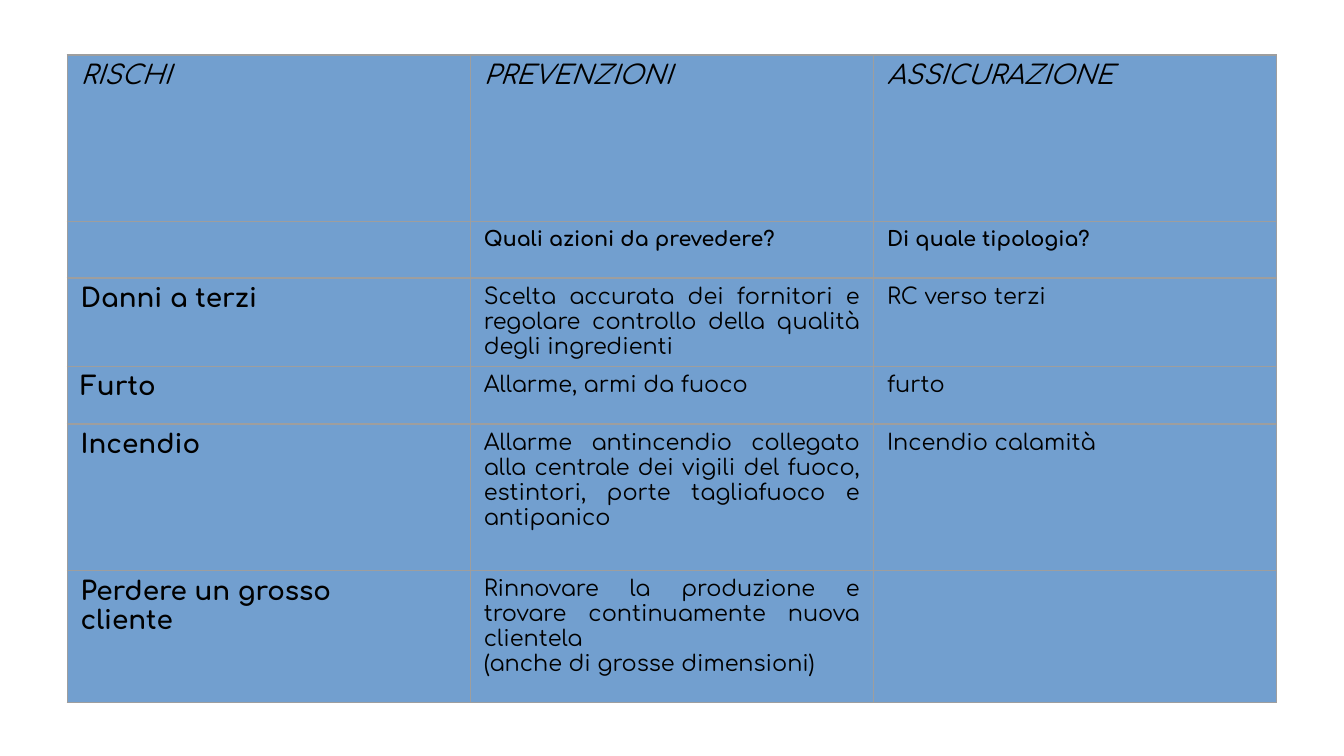
"""Build a slide with a table of business risks, preventions and insurance."""
import pptx
import pptx.dml.color
import pptx.enum.text
import pptx.oxml
import pptx.oxml.ns
import pptx.util

ROWS = [
    (1.24, "heading", ("RISCHI", "PREVENZIONI", "ASSICURAZIONE")),
    (0.42, "question", ("", "Quali azioni da prevedere?", "Di quale tipologia?")),
    (0.55, "answer", (
        "Danni a terzi",
        "Scelta accurata dei fornitori e regolare controllo della qualità degli ingredienti",
        "RC verso terzi")),
    (0.43, "answer", ("Furto", "Allarme, armi da fuoco", "furto")),
    (1.09, "answer", (
        "Incendio",
        "Allarme antincendio collegato alla centrale dei vigili del fuoco, "
        "estintori, porte tagliafuoco e antipanico",
        "Incendio calamità")),
    (0.98, "answer", (
        "Perdere un grosso \vcliente",
        "Rinnovare la produzione e trovare continuamente nuova clientela\n"
        "(anche di grosse dimensioni)",
        "")),
]
STYLES = {
    "heading": {"size": 14, "bold": False, "italic": True},
    "question": {"size": 11, "bold": True, "italic": False},
    "risk": {"size": 14, "bold": True, "italic": False},
    "answer": {"size": 12, "bold": False, "italic": False},
}
FONT, INK, CELL_BLUE, GRID_GREY = "Comfortaa", "000000", "729FCF", "9E9E9E"
WIDTH = 10
HEIGHT = WIDTH * 9 / 16
LEFT, TOP = 0.5, 0.41
COLUMNS = 3


def color(value):
    """Turn a hex string into a colour."""
    return pptx.dml.color.RGBColor.from_string(value)


def draw_borders(cell):
    """Give a cell a thin line on all four sides."""
    properties = cell._tc.get_or_add_tcPr()
    for position, side in enumerate(("lnL", "lnR", "lnT", "lnB")):
        line = pptx.oxml.parse_xml(
            f'<a:{side} {pptx.oxml.ns.nsdecls("a")} w="{pptx.util.Pt(0.75)}">'
            f'<a:solidFill><a:srgbClr val="{GRID_GREY}"/></a:solidFill></a:{side}>')
        properties.insert(position, line)


def fill_cell(cell, text, style):
    """Write, format and colour one cell."""
    cell.fill.solid()
    cell.fill.fore_color.rgb = color(CELL_BLUE)
    draw_borders(cell)
    cell.margin_left = cell.margin_right = pptx.util.Inches(0.1)
    cell.margin_top = cell.margin_bottom = pptx.util.Inches(0.05)
    cell.text_frame.text = text
    align = pptx.enum.text.PP_ALIGN
    for paragraph in cell.text_frame.paragraphs:
        paragraph.alignment = align.LEFT if "\v" in text else align.JUSTIFY
        for run in paragraph.runs:
            run.font.name = FONT
            run.font.size = pptx.util.Pt(style["size"])
            run.font.bold = style["bold"]
            run.font.italic = style["italic"]
            run.font.color.rgb = color(INK)


def main():
    """Create the slide and save it."""
    deck = pptx.Presentation()
    deck.slide_width = pptx.util.Inches(WIDTH)
    deck.slide_height = pptx.util.Inches(HEIGHT)
    slide = deck.slides.add_slide(deck.slide_layouts[6])
    risks = slide.shapes.add_table(
        len(ROWS), COLUMNS, pptx.util.Inches(LEFT), pptx.util.Inches(TOP),
        pptx.util.Inches(WIDTH - 2 * LEFT),
        pptx.util.Inches(sum(height for height, _, _ in ROWS))).table
    risks.first_row = risks.horz_banding = False
    for row, (height, kind, texts) in zip(risks.rows, ROWS):
        row.height = pptx.util.Inches(height)
        for column, (cell, text) in enumerate(zip(row.cells, texts)):
            is_risk = kind == "answer" and column == 0
            fill_cell(cell, text, STYLES["risk" if is_risk else kind])
    deck.save("out.pptx")


if __name__ == "__main__":
    main()
